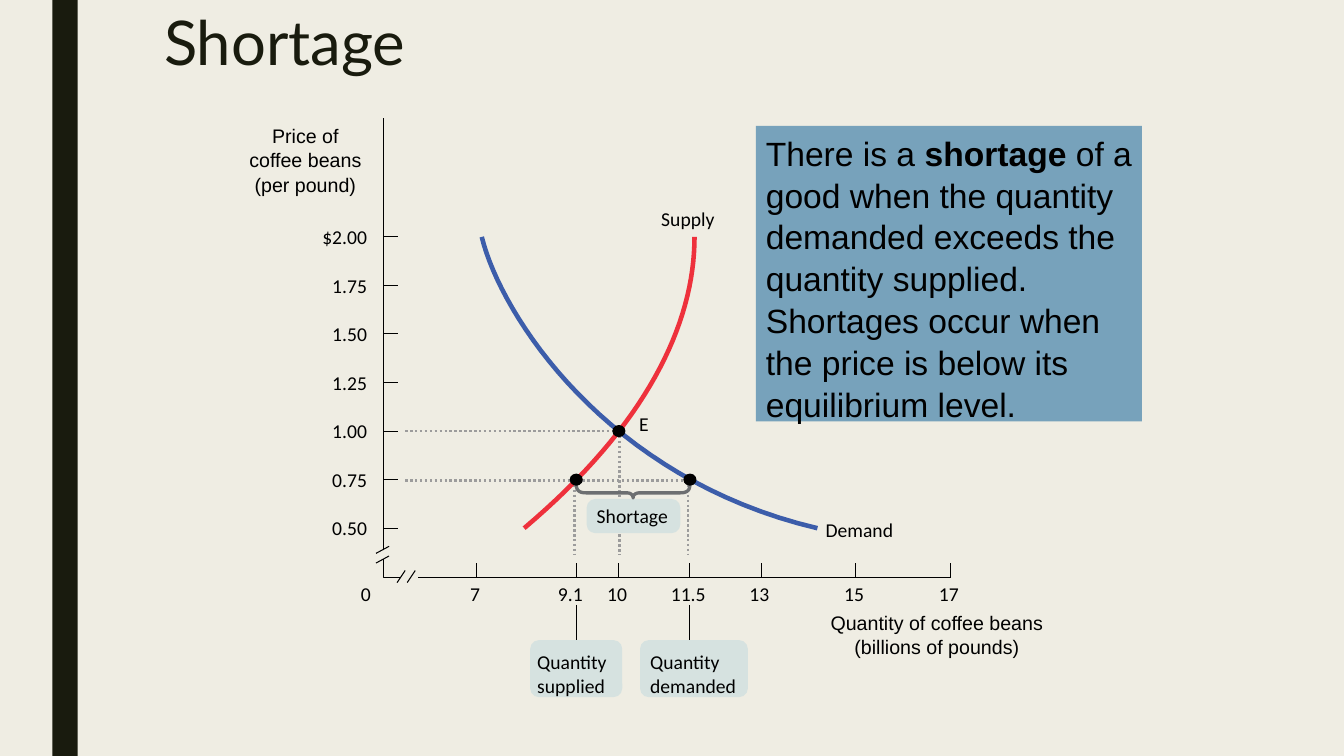
from dataclasses import dataclass

from lxml import etree
from pptx import Presentation
from pptx.dml.color import RGBColor
from pptx.enum.dml import MSO_LINE
from pptx.enum.shapes import MSO_CONNECTOR, MSO_SHAPE
from pptx.enum.text import MSO_ANCHOR, PP_ALIGN
from pptx.oxml.ns import qn
from pptx.util import Emu, Pt

RECT, ROUNDED, OVAL = MSO_SHAPE.RECTANGLE, MSO_SHAPE.ROUNDED_RECTANGLE, MSO_SHAPE.OVAL
STRAIGHT, DOTTED, TOP = MSO_CONNECTOR.STRAIGHT, MSO_LINE.ROUND_DOT, MSO_ANCHOR.TOP
LEFT, CENTER, RIGHT = PP_ALIGN.LEFT, PP_ALIGN.CENTER, PP_ALIGN.RIGHT

COLORS = {
    "background": "EFEDE3", "ink": "191B0E", "black": "000000", "guide": "9C9C9C",
    "supply": "EE313C", "demand": "3C5DAA", "tag": "D6E2E0", "brace": "6D6F71",
    "definition": "77A2BB",
}

# Slide grid: 160 columns by 90 rows of square cells
COLS, ROWS, CELL = 160, 90, 76200
AXIS_X, AXIS_Y = 45.6, 68.76
TICK = 1.75
INSET_X, INSET_Y = 1.2, 0.6

Point = tuple[float, float]


@dataclass
class Label:
    text: str
    x: float
    y: float
    w: float
    h: float = 2.88
    align: PP_ALIGN = LEFT
    font: str = "Calibri"
    size: float = 14
    color: str = "black"
    inset: bool = False
    spacing: float = 1.0


@dataclass
class Tag:
    x: float
    y: float
    w: float
    h: float


@dataclass
class Segment:
    start: Point
    end: Point


def g(cells: float) -> Emu:
    return Emu(round(cells * CELL))


def rgb(name: str) -> RGBColor:
    return RGBColor.from_string(COLORS[name])


def col(quantity: float) -> float:
    return 56.76 + (quantity - 7) * 5.64


def row(price: float) -> float:
    return 28.2 + (2 - price) * 23.12


def bezier(a: Point, b: Point, c: Point, d: Point, steps: int = 32) -> list[Point]:
    points = []
    for i in range(steps + 1):
        t = i / steps
        weights = ((1 - t) ** 3, 3 * t * (1 - t) ** 2, 3 * t * t * (1 - t), t ** 3)
        points.append((sum(k * p[0] for k, p in zip(weights, (a, b, c, d))),
                       sum(k * p[1] for k, p in zip(weights, (a, b, c, d)))))
    return points


def add_box(shapes, kind, x: float, y: float, w: float, h: float, color: str):
    sp = shapes.add_shape(kind, g(x), g(y), g(w), g(h))
    sp.shadow.inherit = False
    sp.fill.solid()
    sp.fill.fore_color.rgb = rgb(color)
    sp.line.fill.background()
    return sp


def add_line(shapes, s: Segment, color: str = "black", width: float = 0.75, dash=None):
    line = shapes.add_connector(STRAIGHT, *(g(v) for v in (*s.start, *s.end)))
    line.line.color.rgb = rgb(color)
    line.line.width = Pt(width)
    if dash is not None:
        line.line.dash_style = dash
    etree.SubElement(line._element.spPr, qn("a:effectLst"))
    return line


def add_path(shapes, points: list[Point], color: str, width: float) -> None:
    emu = [(g(x), g(y)) for x, y in points]
    builder = shapes.build_freeform(*emu[0], scale=1.0)
    builder.add_line_segments(emu[1:], close=False)
    sp = builder.convert_to_shape()
    sp.shadow.inherit = False
    sp.fill.background()
    sp.line.color.rgb = rgb(color)
    sp.line.width = Pt(width)


def set_frame(tf, inset: bool) -> None:
    tf.word_wrap = True
    tf.vertical_anchor = TOP
    tf.margin_left = tf.margin_right = g(INSET_X if inset else 0)
    tf.margin_top = tf.margin_bottom = g(INSET_Y if inset else 0)


def set_paragraph(p, font: str, size: float, color: str, align, spacing: float) -> None:
    p.alignment = align
    p.line_spacing = spacing
    p.font.name, p.font.size = font, Pt(size)
    p.font.color.rgb = rgb(color)


def add_label(shapes, s: Label) -> None:
    tf = shapes.add_textbox(g(s.x), g(s.y), g(s.w), g(s.h)).text_frame
    set_frame(tf, s.inset)
    p = tf.paragraphs[0]
    p.text = s.text
    set_paragraph(p, s.font, s.size, s.color, s.align, s.spacing)


def draw_axes(shapes) -> None:
    add_line(shapes, Segment((AXIS_X, 65.52), (AXIS_X, 14.04)))
    add_line(shapes, Segment((113.16, AXIS_Y), (49.8, AXIS_Y)))
    add_path(shapes, [(47.76, AXIS_Y), (AXIS_X, AXIS_Y), (AXIS_X, 66.6)], "black", 0.75)
    for i in range(2):  # axis breaks
        dy, dx = 1.15 * i, 1.2 * i
        add_line(shapes, Segment((44.76, 65.88 + dy), (46.32, 65.04 + dy)))
        add_line(shapes, Segment((48.24 + dx, 67.92), (47.28 + dx, 69.36)))
    for i in range(7):
        price = 2 - 0.25 * i
        y = row(price)
        add_line(shapes, Segment((AXIS_X, y), (AXIS_X + TICK, y)))
        text = f"${price:.2f}" if i == 0 else f"{price:.2f}"
        add_label(shapes, Label(text, 36, y - 1.4, 7.7, align=RIGHT))
    add_label(shapes, Label("0", 42.96, 69.24, 1.32))
    for quantity in (7, 9.1, 10, 11.5, 13, 15, 17):
        x = col(quantity)
        add_line(shapes, Segment((x, AXIS_Y), (x, AXIS_Y - TICK)))
        shift = 0.7 if quantity == 9.1 else 0.2  # keeps 9.1 clear of 10
        add_label(shapes, Label(f"{quantity:g}", x - 3 - shift, 69.24, 6, align=CENTER))


def draw_guides(shapes) -> None:
    for s in (Segment((48.24, row(0.75) + 0.1), (col(11.5), row(0.75) + 0.1)),
              Segment((48.24, row(1)), (col(10), row(1))),
              Segment((col(10) + 0.1, row(1)), (col(10) + 0.1, 66)),
              Segment((col(11.5) - 0.2, 57.72), (col(11.5) - 0.2, 66)),
              Segment((col(9.1) - 0.2, 57.72), (col(9.1) - 0.2, 66))):
        add_line(shapes, s, "guide", 1.75, DOTTED)


def draw_curves(shapes) -> None:
    supply = bezier((82.68, row(2)), (82.68, 38.64), (76.92, 50.64), (62.4, row(0.5)))
    demand = bezier((57.36, row(2)), (59.64, 37.56), (72.24, 57), (97.32, row(0.5)))
    add_path(shapes, supply, "supply", 3.25)
    add_path(shapes, demand, "demand", 3.25)


def draw_brace(shapes) -> None:
    left, right, top, shelf, tip = col(9.1), col(11.5), 57.6, 58.68, 59.28
    mid = (left + right) / 2
    half = bezier((left, top), (left, 58.32), (left + 0.24, shelf), (left + 1.2, shelf), 8)
    half += bezier((mid - 0.72, shelf), (mid - 0.48, shelf), (mid, 58.8), (mid, tip), 8)
    mirrored = [(left + right - x, y) for x, y in reversed(half[:-1])]
    add_path(shapes, half + mirrored, "brace", 2.38)


def draw_definition(shapes) -> None:
    sp = add_box(shapes, RECT, 90, 15, 45.96, 35.16, "definition")
    set_frame(sp.text_frame, True)
    p = sp.text_frame.paragraphs[0]
    set_paragraph(p, "Arial", 24, "black", LEFT, 1.04)
    for text, bold in (("There is a ", False), ("shortage", True),
                       (" of a good when the quantity demanded exceeds the quantity supplied. "
                        "Shortages occur when the price is below its equilibrium level.", False)):
        r = p.add_run()
        r.text, r.font.bold = text, bold


def main() -> None:
    prs = Presentation()
    prs.slide_width, prs.slide_height = g(COLS), g(ROWS)
    slide = prs.slides.add_slide(prs.slide_layouts[6])
    slide.background.fill.solid()
    slide.background.fill.fore_color.rgb = rgb("background")
    shapes = slide.shapes

    # Side band and chart
    add_box(shapes, RECT, 6.24, 0, 3, ROWS, "ink")
    draw_guides(shapes)
    draw_axes(shapes)
    draw_curves(shapes)

    # Tags below the axis and under the brace
    tags = []
    for t in (Tag(col(9.1) - 5.48, 76.2, 10.96, 6.8), Tag(76.2, 76.2, 12.84, 6.8),
              Tag(69.84, 59.4, 11.16, 4.08)):
        sp = add_box(shapes, ROUNDED, t.x, t.y, t.w, t.h, "tag")
        sp.adjustments[0] = 1.05 / t.h
        tags.append(sp)
    for quantity in (9.1, 11.5):
        line = add_line(shapes, Segment((col(quantity), 72), (col(quantity), 76.2)))
        if quantity == 9.1:
            line.end_connect(tags[0], 0)
    draw_brace(shapes)
    for quantity, price in ((10, 1), (11.5, 0.75), (9.1, 0.75)):
        add_box(shapes, OVAL, col(quantity) - 0.78, row(price) - 0.72, 1.56, 1.44, "black")

    # Text
    draw_definition(shapes)
    for s in (
        Label("Supply", 78.72, 24.6, 9), Label("Demand", 98.28, 61.68, 10),
        Label("E", 76.08, 49.08, 2), Label("Shortage", 71.04, 60, 10),
        Label("Quantity supplied", 63.96, 77.4, 10.08, 5.64),
        Label("Quantity demanded", 77.4, 77.4, 13.44, 5.64),
        Label("Price of coffee beans (per pound)", 27.96, 14.04, 16.8, 9.72,
              CENTER, "Arial", inset=True, spacing=1.04),
        Label("Quantity of coffee beans (billions of pounds)", 96.96, 72, 29.16, 6.84,
              CENTER, "Arial", inset=True, spacing=1.04),
        Label("Shortage", 18.36, 0.96, 126, 19.44, font="Lato", size=44, color="ink",
              inset=True, spacing=0.89),
    ):
        add_label(shapes, s)
    prs.save("out.pptx")


if __name__ == "__main__":
    main()
